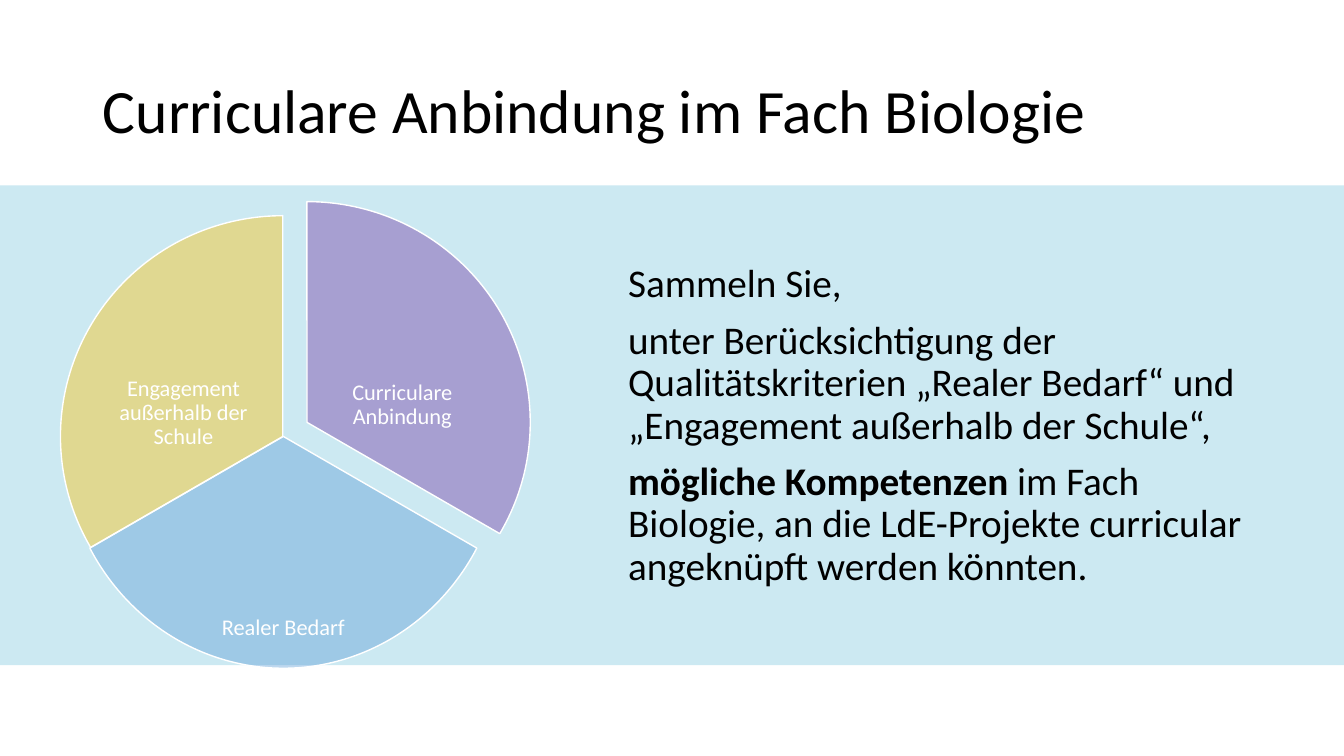
from lxml import etree
from pptx import Presentation
from pptx.dml.color import RGBColor
from pptx.enum import shapes, text
from pptx.oxml import ns
from pptx.util import Inches, Pt

FONT = "Calibri"
BLACK = RGBColor(0, 0, 0)
WHITE = RGBColor(0xFF, 0xFF, 0xFF)
BAND = RGBColor(0xCC, 0xE9, 0xF2)
PURPLE = RGBColor(0x70, 0x30, 0xA0)
BLUE = RGBColor(0x5B, 0x9B, 0xD5)
GOLD = RGBColor(0xFF, 0xC0, 0x00)

# Angles in degrees, clockwise from the right; pie box; label box
SLICES = [
    ("Curriculare Anbindung", PURPLE, 270, 30,
     (0.83, 2, 4.43, 4.38), (3.24, 2.8, 1.5, 1.46)),
    ("Realer Bedarf", BLUE, 30, 150,
     (0.62, 2.03, 4.38, 4.6), (1.82, 4.93, 1.98, 1.42)),
    ("Engagement außerhalb der Schule", GOLD, 150, 270,
     (0.6, 2.14, 4.41, 4.38), (1.07, 3, 1.5, 1.46)),
]

TASK = [
    [("Sammeln Sie,", False)],
    [("unter Berücksichtigung der Qualitätskriterien „Realer Bedarf“ und "
      "„Engagement außerhalb der Schule“,", False)],
    [("mögliche Kompetenzen", True),
     (" im Fach Biologie, an die LdE-Projekte curricular angeknüpft "
      "werden könnten.", False)],
]


class Page:
    def __init__(self, deck):
        self.slide = deck.slides.add_slide(deck.slide_layouts[1])

    def fill_text(self, frame, paras, size, color, align, anchor):
        frame.word_wrap = True
        frame.auto_size = text.MSO_AUTO_SIZE.NONE
        frame.vertical_anchor = anchor
        for i, runs in enumerate(paras):
            para = frame.add_paragraph() if i else frame.paragraphs[0]
            para.alignment = align
            para.line_spacing = 0.9
            para.space_before = Pt(10 if i else 0)
            for words, bold in runs:
                run = para.add_run()
                run.text = words
                font = run.font
                font.name, font.size, font.bold = FONT, Pt(size), bold
                font.color.rgb = color

    def place(self, holder, box):
        holder.left, holder.top, holder.width, holder.height = map(Inches, box)

    def band(self, box):
        """Add the colour band behind everything else."""
        rect = self.slide.shapes.add_shape(
            shapes.MSO_SHAPE.RECTANGLE, *map(Inches, box))
        rect.shadow.inherit = False
        rect.fill.solid()
        rect.fill.fore_color.rgb = BAND
        rect.line.fill.background()
        rect.element.getparent().insert(2, rect.element)

    def title(self, words, box):
        holder = self.slide.shapes.title
        self.place(holder, box)
        self.fill_text(holder.text_frame, [[(words, False)]], 44, BLACK,
                       text.PP_ALIGN.LEFT, text.MSO_ANCHOR.MIDDLE)

    def body(self, paras, box):
        holder = self.slide.placeholders[1]
        self.place(holder, box)
        frame = holder.text_frame
        self.fill_text(frame, paras, 28, BLACK,
                       text.PP_ALIGN.LEFT, text.MSO_ANCHOR.TOP)
        for para in frame.paragraphs:
            props = para._p.get_or_add_pPr()
            props.set("marL", "0")
            props.set("indent", "0")
            etree.SubElement(props, ns.qn("a:buNone"))

    def slice(self, group, color, start, end, box):
        pie = group.shapes.add_shape(shapes.MSO_SHAPE.PIE, *map(Inches, box))
        # One adjustment unit is 100000 / 60000 degrees
        pie.adjustments[0] = start * 0.6
        pie.adjustments[1] = end * 0.6
        pie.shadow.inherit = False
        pie.fill.solid()
        pie.fill.fore_color.rgb = color
        tone = pie.element.spPr.find(ns.qn("a:solidFill"))[0]
        etree.SubElement(tone, ns.qn("a:alpha"), val="40000")
        pie.line.color.rgb = WHITE
        pie.line.width = Pt(1)

    def label(self, group, words, box):
        frame = group.shapes.add_textbox(*map(Inches, box)).text_frame
        frame.margin_left = frame.margin_right = 0
        frame.margin_top = frame.margin_bottom = 0
        self.fill_text(frame, [[(words, False)]], 16, WHITE,
                       text.PP_ALIGN.CENTER, text.MSO_ANCHOR.BOTTOM)

    def wheel(self, slices):
        group = self.slide.shapes.add_group_shape()
        for words, color, start, end, pie, box in slices:
            self.slice(group, color, start, end, pie)
            self.label(group, words, box)


def main():
    deck = Presentation()
    deck.slide_width, deck.slide_height = Inches(13.33), Inches(7.5)
    page = Page(deck)
    page.band((0, 1.84, 13.33, 4.76))
    page.title("Curriculare Anbindung im Fach Biologie",
               (0.92, 0.4, 11.5, 1.45))
    page.wheel(SLICES)
    page.body(TASK, (6.13, 2.57, 6.54, 3.48))
    deck.save("out.pptx")


if __name__ == "__main__":
    main()
